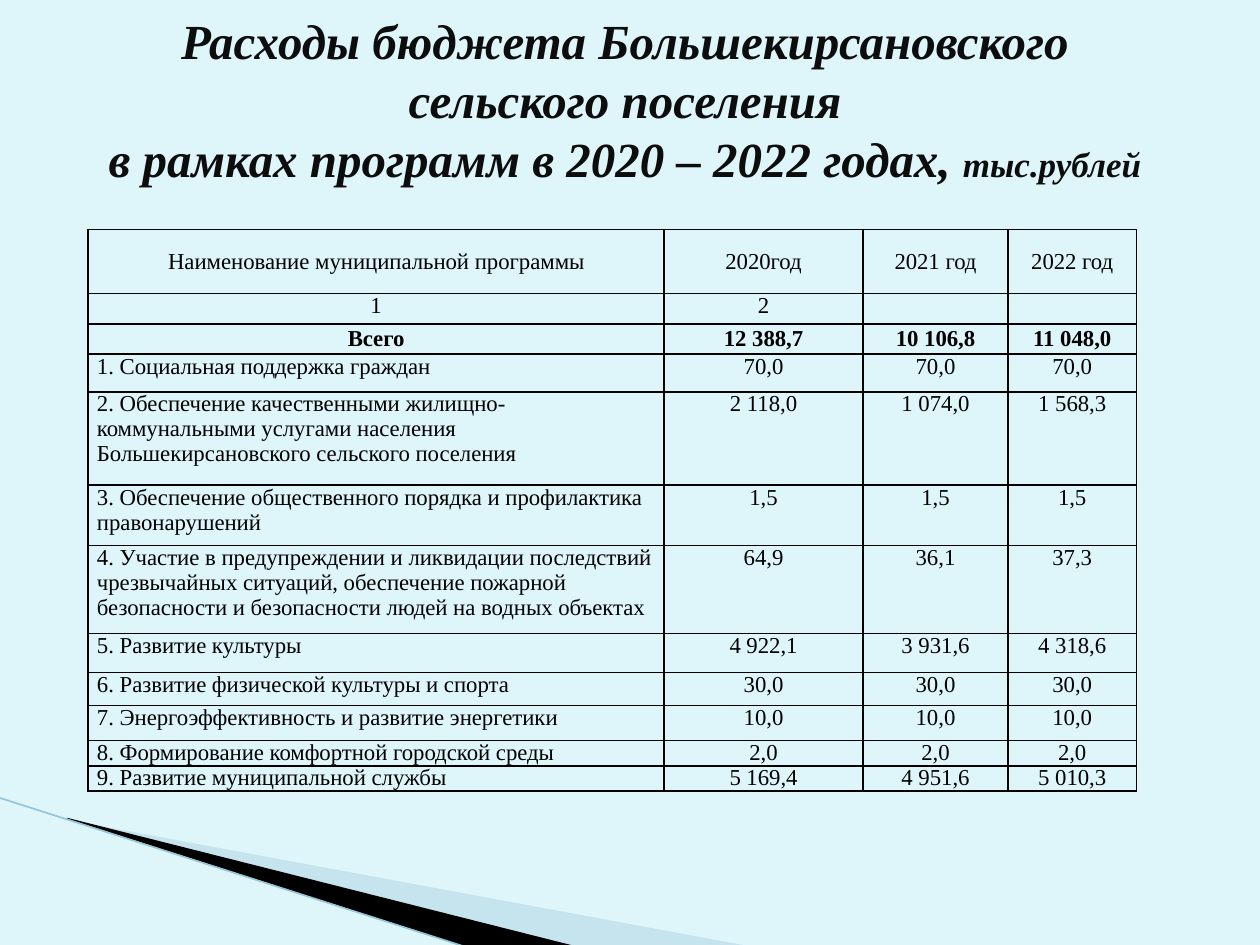
from lxml.etree import SubElement
from pptx import Presentation
from pptx.dml.color import RGBColor
from pptx.enum.text import MSO_ANCHOR as Anchor, PP_ALIGN as Align
from pptx.oxml.ns import qn
from pptx.util import Inches, Pt

COLORS = {"background": "DEF5FA", "wedge": "A0CBDC", "edge": "97C5D8",
          "black": "000000", "title": "0D0D0D"}
FONT = "Times New Roman"
COLUMNS, ROWS = 100, 75  # grid over the whole slide

TITLE = [("Расходы бюджета Большекирсановского\vсельского поселения\v"
          "в рамках программ в 2020 – 2022 годах, ", 28), ("тыс.рублей", 20)]
COLUMN_WIDTHS = [45.7, 15.8, 11.5, 10.2]
# Row height, then the cell texts
PROGRAMS = [
    (5.1, "Наименование муниципальной программы", "2020год", "2021 год", "2022 год"),
    (2.4, "1", "2", "", ""),
    (2.4, "Всего", "12 388,7", "10 106,8", "11 048,0"),
    (3.0, "1. Социальная поддержка граждан", "70,0", "70,0", "70,0"),
    (7.4, "2. Обеспечение качественными жилищно-коммунальными услугами населения "
          "Большекирсановского сельского поселения", "2 118,0", "1 074,0", "1 568,3"),
    (4.8, "3. Обеспечение общественного порядка и профилактика правонарушений",
     "1,5", "1,5", "1,5"),
    (7.0, "4. Участие в предупреждении и ликвидации последствий чрезвычайных ситуаций, "
          "обеспечение пожарной безопасности и безопасности людей на водных объектах",
     "64,9", "36,1", "37,3"),
    (3.1, "5. Развитие культуры", "4 922,1", "3 931,6", "4 318,6"),
    (2.6, "6. Развитие физической культуры и спорта", "30,0", "30,0", "30,0"),
    (2.8, "7. Энергоэффективность и развитие энергетики", "10,0", "10,0", "10,0"),
    (1.6, "8. Формирование комфортной городской среды", "2,0", "2,0", "2,0"),
    (1.6, "9. Развитие муниципальной службы", "5 169,4", "4 951,6", "5 010,3"),
]
HEADER_ROW, TOTAL_ROW, FIRST_PROGRAM = 0, 2, 3


def apply(target, **values):
    for name, value in values.items():
        setattr(target, name, value)


class Page:
    def __init__(self, deck):
        self.deck = deck
        self.slide = deck.slides.add_slide(deck.slide_layouts[5])
        self.shapes = self.slide.shapes
        self.paint(self.slide.background.fill, "background")

    def x(self, columns):
        return round(self.deck.slide_width * columns / COLUMNS)

    def y(self, rows):
        return round(self.deck.slide_height * rows / ROWS)

    def area(self, left, top, width, height):
        return self.x(left), self.y(top), self.x(width), self.y(height)

    def paint(self, fill, color):
        fill.solid()
        fill.fore_color.rgb = RGBColor.from_string(COLORS[color])

    def span(self, para, text, color="black", **style):
        span = para.add_run()
        span.text = text
        apply(span.font, name=FONT, **style)
        span.font.color.rgb = RGBColor.from_string(COLORS[color])

    def title(self, parts, *area):
        box = self.shapes.title
        apply(box, **dict(zip(("left", "top", "width", "height"), self.area(*area))))
        apply(box.text_frame, vertical_anchor=Anchor.MIDDLE, word_wrap=True)
        para = box.text_frame.paragraphs[0]
        para.alignment = Align.CENTER
        for text, size in parts:
            # Each line of the title is a span, joined by line breaks
            for number, line in enumerate(text.split("\v")):
                if number:
                    para.add_line_break()
                self.span(para, line, "title", size=Pt(size), bold=True, italic=True)

    def outline(self, points, color, opacity=None):
        corners = [(self.x(column), self.y(row)) for column, row in points]
        builder = self.shapes.build_freeform(*corners[0])
        builder.add_line_segments(corners[1:], close=True)
        shape = builder.convert_to_shape()
        shape.shadow.inherit = False
        self.paint(shape.fill, color)
        shape.line.fill.background()
        if opacity is not None:
            tint = shape.fill._xPr.find(qn("a:solidFill"))[0]
            SubElement(tint, qn("a:alpha"), val=str(opacity * 1000))

    def line(self, start, end, color, width):
        points = [self.x(start[0]), self.y(start[1]), self.x(end[0]), self.y(end[1])]
        line = self.shapes.add_connector(1, *points)
        line.line.color.rgb = RGBColor.from_string(COLORS[color])
        line.line.width = Pt(width)
        SubElement(line._element.spPr, qn("a:effectLst"))

    def border(self, cell, color, width):
        properties = cell._tc.get_or_add_tcPr()
        for place, side in enumerate(("lnL", "lnR", "lnT", "lnB")):
            edge = properties.makeelement(qn("a:" + side), {"w": str(Pt(width))})
            fill = SubElement(edge, qn("a:solidFill"))
            SubElement(fill, qn("a:srgbClr"), val=COLORS[color])
            properties.insert(place, edge)

    def cell(self, cell, text, align, anchor, bold, size=13):
        apply(cell, margin_left=Inches(0.07), margin_right=Inches(0.07),
              margin_top=0, margin_bottom=0, vertical_anchor=anchor)
        cell.fill.background()
        self.border(cell, "black", 1)
        para = cell.text_frame.paragraphs[0]
        para.alignment = align
        if text:
            self.span(para, text, size=Pt(size), bold=bold)
        else:  # keeps an empty row as low as a filled one
            SubElement(para._p, qn("a:endParaRPr"), sz=str(size * 100))

    def table(self, rows, widths, left, top):
        height = sum(row[0] for row in rows)
        area = self.area(left, top, sum(widths), height)
        table = self.shapes.add_table(len(rows), len(widths), *area).table
        apply(table, first_row=False, horz_banding=False)
        for column, width in zip(table.columns, widths):
            column.width = self.x(width)
        for r, (row_height, *texts) in enumerate(rows):
            table.rows[r].height = self.y(row_height)
            middle = r in (HEADER_ROW, TOTAL_ROW)
            for c, text in enumerate(texts):
                named = c == 0 and r >= FIRST_PROGRAM
                self.cell(table.cell(r, c), text,
                          Align.LEFT if named else Align.CENTER,
                          Anchor.MIDDLE if middle else Anchor.TOP, r == TOTAL_ROW)


def main():
    deck = Presentation()
    deck.slide_width, deck.slide_height = Inches(10), Inches(7.5)
    page = Page(deck)
    # Corner decoration
    page.outline([(5.5, 65.1), (59.5, 75.1), (45.6, 75.1), (5.5, 65)], "wedge", 40)
    page.outline([(5.3, 64.9), (45.7, 75.1), (37.2, 75.2), (5.4, 65)], "black")
    page.line((-0.1, 63.3), (37.1, 75.2), "edge", 0.95)
    # Title and table of programs
    page.title(TITLE, 3.1, 1.6, 93, 12.5)
    page.table(PROGRAMS, COLUMN_WIDTHS, 7, 18.2)
    deck.save("out.pptx")


if __name__ == "__main__":
    main()
